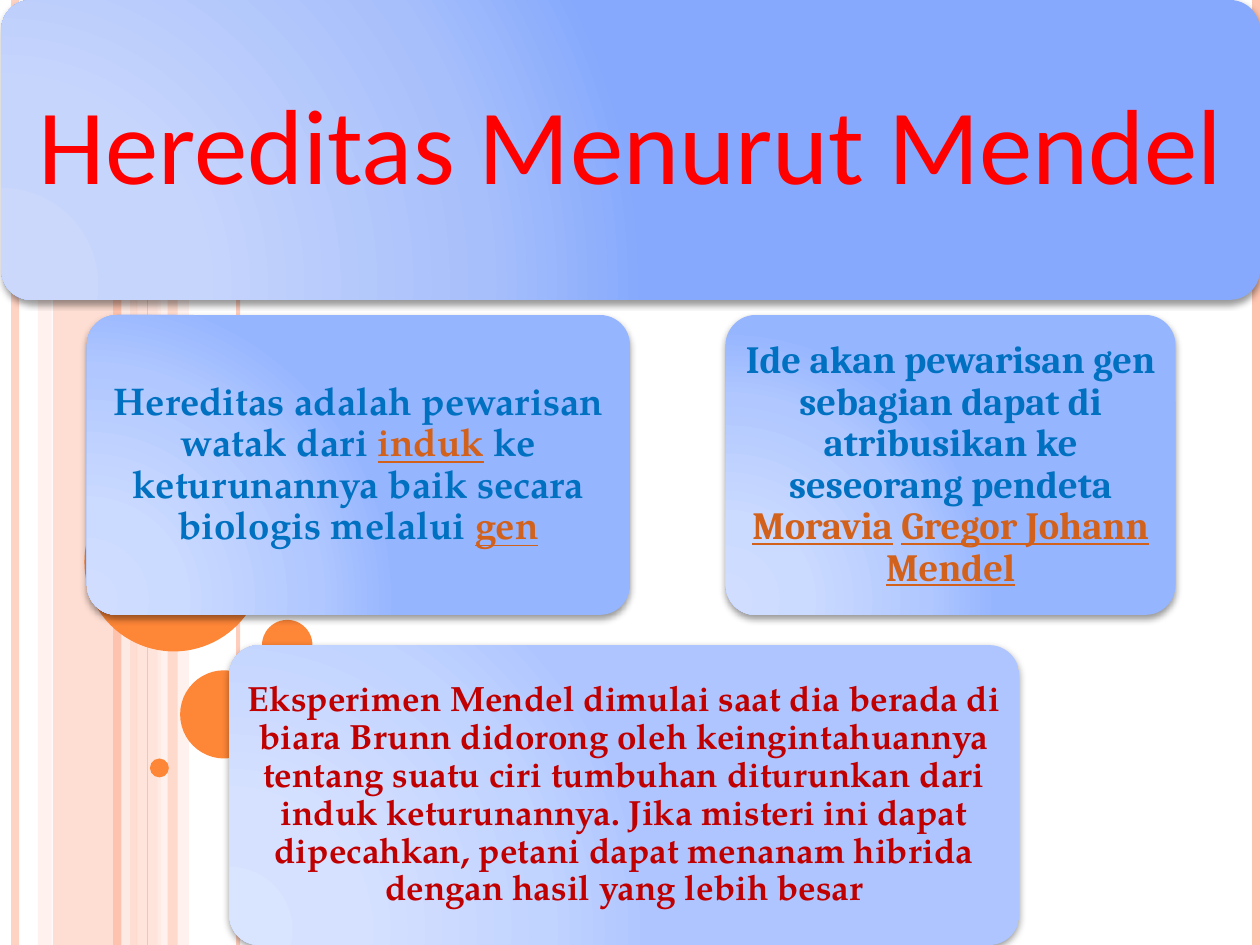
from lxml import etree
from pptx import Presentation
from pptx.dml.color import RGBColor
from pptx.enum import shapes, text
from pptx.oxml.ns import qn
from pptx.util import Inches, Pt

BLUE, RED, LINK = "0070C0", "C00000", "D2611C"
PEACH, BLUSH, PALE, ORANGE = "FEC3AE", "FFD9CE", "FFEDE8", "FE8637"
CARD_HEIGHT = 2.38


def color(value):
    """Turn a hex string into a colour."""
    return RGBColor.from_string(value)


def add_node(parent, tag, **attributes):
    """Append a DrawingML element with the given attributes."""
    names = {name: str(value) for name, value in attributes.items()}
    return etree.SubElement(parent, qn(f"a:{tag}"), names)


def paint(fill, value, opacity=100):
    """Give a fill a solid colour with an opacity in percent."""
    fill.solid()
    fill.fore_color.rgb = color(value)
    if opacity < 100:
        solid = fill._xPr.find(qn("a:solidFill"))
        add_node(solid[0], "alpha", val=opacity * 1000)


def add_plain(slide, kind, left, top, width, height, value, opacity=100):
    """Add a flat shape without outline."""
    shape = slide.shapes.add_shape(
        kind, Inches(left), Inches(top), Inches(width), Inches(height))
    shape.shadow.inherit = False
    shape.line.fill.background()
    paint(shape.fill, value, opacity)
    return shape


def add_band(slide, left, width, value, opacity):
    """Add a vertical band over the full slide height."""
    add_plain(slide, shapes.MSO_SHAPE.RECTANGLE, left, 0, width, 7.5, value, opacity)


def add_stripe(slide, x, value, weight, opacity):
    """Add a vertical line over the full slide height."""
    stripe = slide.shapes.add_connector(
        shapes.MSO_CONNECTOR.STRAIGHT, Inches(x), 0, Inches(x), Inches(7.5))
    stripe.line.width = Pt(weight)
    paint(stripe.line.fill, value, opacity)
    add_node(stripe._element.spPr, "effectLst")


def add_card(slide, left, top, width, stops):
    """Add a rounded card with a radial gradient and a soft shadow."""
    card = add_plain(slide, shapes.MSO_SHAPE.ROUNDED_RECTANGLE,
                     left, top, width, CARD_HEIGHT, stops[-1])
    card.adjustments[0] = 0.1
    properties = card._element.spPr
    gradient = etree.Element(qn("a:gradFill"), rotWithShape="1")
    stop_list = add_node(gradient, "gsLst")
    for position, value in zip((0, 30, 75, 100), stops):
        stop = add_node(stop_list, "gs", pos=position * 1000)
        add_node(stop, "srgbClr", val=value)
    radial = add_node(gradient, "path", path="circle")
    add_node(radial, "fillToRect", l=5000, t=100000, r=120000, b=10000)
    properties.replace(properties.find(qn("a:solidFill")), gradient)
    shadow = add_node(properties.find(qn("a:effectLst")), "outerShdw", blurRad=Pt(4),
                      dist=Pt(2), dir=90 * 60000, rotWithShape=0)
    add_node(add_node(shadow, "srgbClr", val="000000"), "alpha", val=40000)
    return card


def write(frame, runs, font, size, inset, bold=True):
    """Write centred runs, underlining those in the link colour."""
    frame.word_wrap = True
    frame.auto_size = text.MSO_AUTO_SIZE.NONE
    frame.vertical_anchor = text.MSO_ANCHOR.MIDDLE
    frame.margin_left = frame.margin_right = Inches(inset)
    frame.margin_top = frame.margin_bottom = Inches(inset)
    paragraph = frame.paragraphs[0]
    paragraph.alignment = text.PP_ALIGN.CENTER
    paragraph.line_spacing = 0.9
    for words, value in runs:
        run = paragraph.add_run()
        run.text = words
        run.font.name = font
        run.font.size = Pt(size)
        run.font.bold = bold
        run.font.underline = value == LINK
        run.font.color.rgb = color(value)


def add_backdrop(slide):
    """Draw the striped margin and its circles."""
    for band in ((0.42, 0.67, PEACH, 54), (0.3, 0.11, BLUSH, 36),
                 (1.08, 0.2, BLUSH, 70), (1.25, 0.25, PALE, 71)):
        add_band(slide, *band)
    for stripe in ((0.12, PEACH, 4.5, 73), (1, PALE, 4.5, 83), (0.93, PEACH, 4.5, 100),
                   (1.89, PEACH, 2.25, 82), (1.17, PEACH, 0.75, 100),
                   (9.97, PEACH, 4.5, 100)):
        add_stripe(slide, *stripe)
    add_band(slide, 1.33, 0.08, PEACH, 51)
    for left, top, size in ((0.67, 3.75, 1.42), (1.43, 5.32, 0.7), (1.19, 6.02, 0.15),
                            (1.82, 6.33, 0.3), (2.08, 4.92, 0.4)):
        add_plain(slide, shapes.MSO_SHAPE.OVAL, left, top, size, size, ORANGE)


def add_heading(slide):
    """Place the title on its wide card."""
    banner = add_card(slide, 0.01, 0, 9.99, ("CBD8FC", "C6D5FC", "A7BFFB", "86A9FD"))
    title = slide.shapes.title
    title.left, title.top = banner.left, banner.top
    title.width, title.height = banner.width, banner.height
    write(title.text_frame, [("Hereditas Menurut Mendel", "FF0000")],
          "Calibri", 61, 0.25, bold=False)
    title.element.getparent().append(title.element)


def main():
    """Build the slide and save it."""
    deck = Presentation()
    deck.slide_width, deck.slide_height = Inches(10), Inches(7.5)
    slide = deck.slides.add_slide(deck.slide_layouts[5])
    add_backdrop(slide)
    add_heading(slide)

    middle = ("D0DDFF", "CBDAFF", "B0C7FF", "96B5FF")
    definition = add_card(slide, 0.69, 2.5, 4.31, middle)
    write(definition.text_frame, [
        ("Hereditas adalah pewarisan watak dari ", BLUE),
        ("induk", LINK),
        (" ke keturunannya baik secara biologis melalui ", BLUE),
        ("gen", LINK),
    ], "TeX Gyre Pagella", 22, 0.02)

    experiment = add_card(slide, 1.82, 5.12, 6.27,
                          ("D9E4FF", "D6E1FF", "C1D3FF", "AEC5FF"))
    write(experiment.text_frame, [
        ("Eksperimen Mendel dimulai saat dia berada di biara Brunn didorong oleh "
         "keingintahuannya tentang suatu ciri tumbuhan diturunkan dari induk "
         "keturunannya. Jika misteri ini dapat dipecahkan, petani dapat menanam "
         "hibrida dengan hasil yang lebih besar", RED),
    ], "TeX Gyre Pagella", 20, 0.01)

    origin = add_card(slide, 5.76, 2.5, 3.57, middle)
    write(origin.text_frame, [
        ("Ide akan pewarisan gen sebagian dapat di atribusikan ke seseorang pendeta ", BLUE),
        ("Moravia", LINK),
        (" ", BLUE),
        ("Gregor Johann Mendel", LINK),
    ], "Cambria", 22, 0.02)
    deck.save("out.pptx")


if __name__ == "__main__":
    main()
